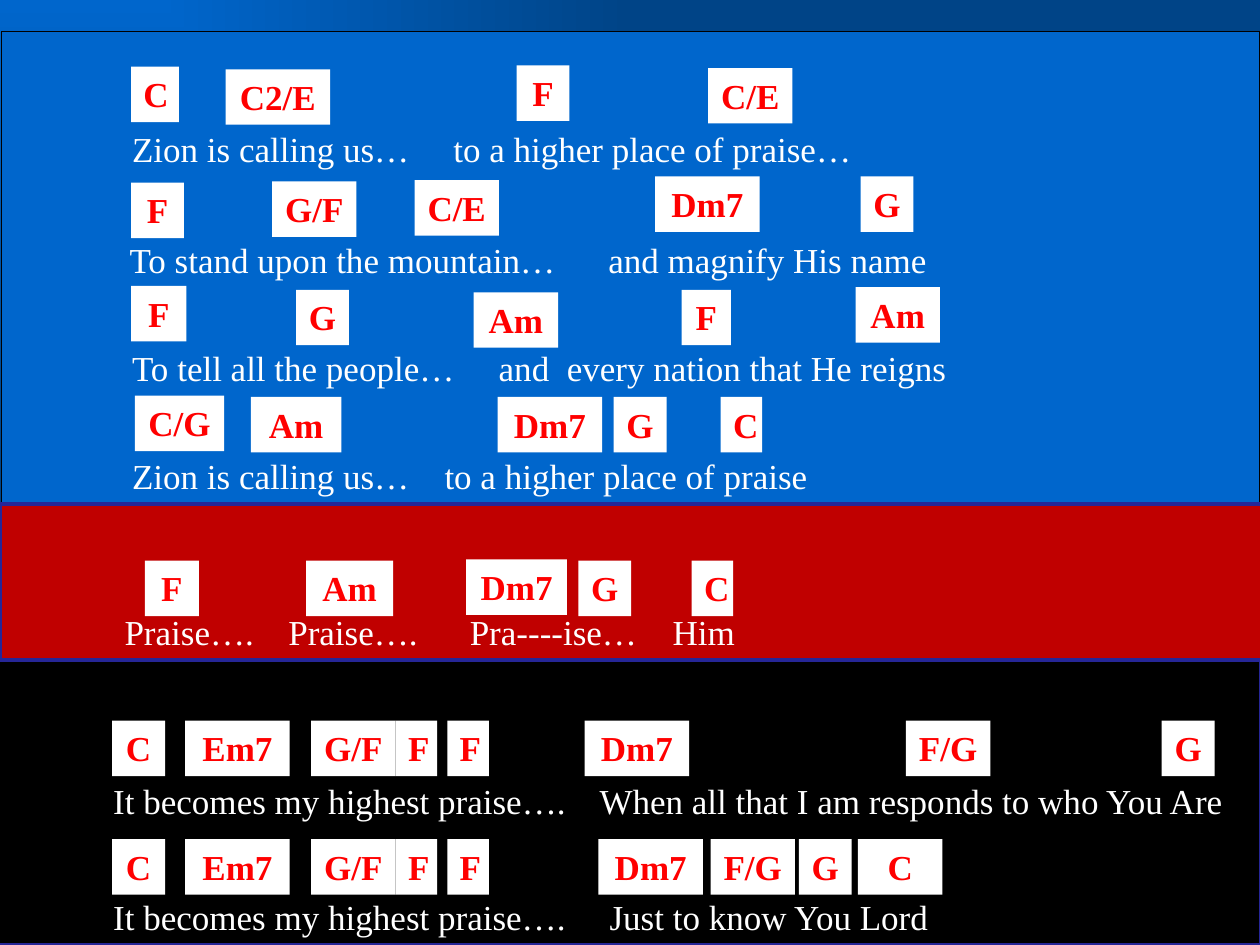
import pptx
import pptx.util
import pptx.dml.color
import pptx.enum.shapes
import pptx.enum.text
import pptx.oxml.ns
import lxml.etree

RGB = pptx.dml.color.RGBColor
BLUE = RGB(0x00, 0x66, 0xCC)
NAVY = RGB(0x00, 0x44, 0x87)
CRIMSON = RGB(0xC0, 0x00, 0x00)
INDIGO = RGB(0x26, 0x26, 0x97)
BLACK = RGB(0x00, 0x00, 0x00)
WHITE = RGB(0xFF, 0xFF, 0xFF)
RED = RGB(0xFF, 0x00, 0x00)

SCALE = 9144  # EMU per px, 100 px to the inch
ROW = 44      # height of a lyric or chord box
FONT = {"name": "Times New Roman", "size": pptx.util.Pt(20)}
FRAME = {"word_wrap": True,
         "vertical_anchor": pptx.enum.text.MSO_ANCHOR.TOP,
         "auto_size": pptx.enum.text.MSO_AUTO_SIZE.SHAPE_TO_FIT_TEXT}
ALIGN = pptx.enum.text.PP_ALIGN

# Verse: left, top, width, phrases as (tab stop, words),
# chords as (name, left, rise above the lyric, width)
SONG = [
    (30, 71, 907, [(0, "Zion is calling us…"), (255, "to a higher place of praise…")],
     [("C", 103, 43, 38), ("C2/E", 178, 41, 83), ("F", 409, 44, 42),
      ("C/E", 561, 42, 67)]) ,
    (92, 159, 907, [(0, "To stand upon the mountain…"), (380, "and magnify His name")],
     [("F", 103, 39, 42), ("G/F", 215, 40, 67), ("C/E", 328, 41, 67),
      ("Dm7", 519, 44, 83), ("G", 682, 44, 42)]),
    (94, 245, 907, [(0, "To tell all the people…"), (291, "and"),
                    (345, "every nation that He reigns")],
     [("F", 103, 43, 44), ("G", 234, 40, 42), ("Am", 375, 38, 67),
      ("F", 540, 40, 39), ("Am", 678, 42, 67)]),
    (94, 331, 907, [(0, "Zion is calling us…"), (248, "to a higher place of praise")],
     [("C/G", 106, 42, 71), ("Am", 198, 41, 72), ("Dm7", 394, 41, 83),
      ("G", 486, 41, 42), ("C", 571, 41, 33)]),
]
SONG[0] = (94,) + SONG[0][1:]
PRAISE = [
    (89, 80, 914, [(0, "Praise…."), (130, "Praise…."), (274, "Pra----ise…"), (435, "Him")],
     [("F", 115, 35, 43), ("Am", 243, 35, 69), ("Dm7", 370, 36, 80),
      ("G", 459, 35, 42), ("C", 549, 35, 33)]),
]
START = [("C", 91, 42), ("Em7", 149, 83), ("G/F", 249, 67), ("F", 316, 33), ("F", 357, 33)]
WHEN = [("Dm7", 466, 83), ("F/G", 721, 67), ("G", 924, 42)]
JUST = [("Dm7", 477, 83), ("F/G", 566, 67), ("G", 636, 42), ("C", 683, 67)]
HIGH = "It becomes my highest praise…."
CLOSE = [
    (82, 90, 921, [(0, HIGH), (386, "When all that I am responds to who You Are")],
     [(name, x, 42, w) for name, x, w in START + WHEN]),
    (82, 182, 920, [(0, HIGH), (394, "Just to know You Lord")],
     [(name, x, 40, w) for name, x, w in START + JUST]),
]


def px(*nums):
    return [n * SCALE for n in nums]


def child(node, tag, **attrs):
    return lxml.etree.SubElement(node, pptx.oxml.ns.qn(tag), attrs)


def block(slide, box, fill):
    shape = slide.shapes.add_shape(pptx.enum.shapes.MSO_SHAPE.RECTANGLE, *px(*box))
    shape.shadow.inherit = False
    shape.fill.solid()
    shape.fill.fore_color.rgb = fill
    shape.line.fill.background()
    return shape


def write(shape, text, color, align, bold=False, tabs=()):
    frame = shape.text_frame
    for key, val in FRAME.items():
        setattr(frame, key, val)
    para = frame.paragraphs[0]
    para.alignment = align
    run = para.add_run()
    run.text = text
    for key, val in {**FONT, "bold": bold}.items():
        setattr(run.font, key, val)
    run.font.color.rgb = color
    # Half a line before, then the tab stops
    props = para._p.get_or_add_pPr()
    child(child(props, "a:spcBef"), "a:spcPct", val="50000")
    if tabs:
        stops = child(props, "a:tabLst")
        for tab in tabs:
            child(stops, "a:tab", pos=str(tab * SCALE), algn="l")


def region(slide, box, fill, line, width, verses):
    left, top = box[:2]
    panel = block(slide, box, fill)
    panel.line.color.rgb = line
    panel.line.width = pptx.util.Pt(width)
    for x, y, wide, parts, chords in verses:
        # Lyric line
        lyric = slide.shapes.add_textbox(*px(left + x, top + y, wide, ROW))
        write(lyric, "\t".join(words for _, words in parts), WHITE, ALIGN.LEFT,
              tabs=[tab for tab, _ in parts[1:]])
        # Chords above it
        for name, cx, rise, w in chords:
            chip = block(slide, (left + cx, top + y - rise, w, ROW), WHITE)
            write(chip, name, RED, ALIGN.CENTER, bold=True)


def backdrop(slide):
    fill = slide.background.fill
    fill.gradient()
    for stop, color in zip(fill.gradient_stops, (BLUE, NAVY)):
        stop.color.rgb = color
    # Rectangular spread from the top left corner
    grad = next(slide.element.iter(pptx.oxml.ns.qn("a:gradFill")))
    for lin in grad.findall(pptx.oxml.ns.qn("a:lin")):
        grad.remove(lin)
    child(child(grad, "a:path", path="rect"), "a:fillToRect", r="100000", b="100000")


def main():
    deck = pptx.Presentation()
    deck.slide_width, deck.slide_height = px(1000, 750)
    slide = deck.slides.add_slide(deck.slide_layouts[6])
    backdrop(slide)
    region(slide, (1, 25, 999, 383), BLUE, BLACK, 0.75, SONG)
    region(slide, (0, 400, 1002, 133), CRIMSON, INDIGO, 2, PRAISE)
    region(slide, (-2, 524, 1003, 226), BLACK, INDIGO, 2, CLOSE)
    deck.save("out.pptx")


if __name__ == "__main__":
    main()
